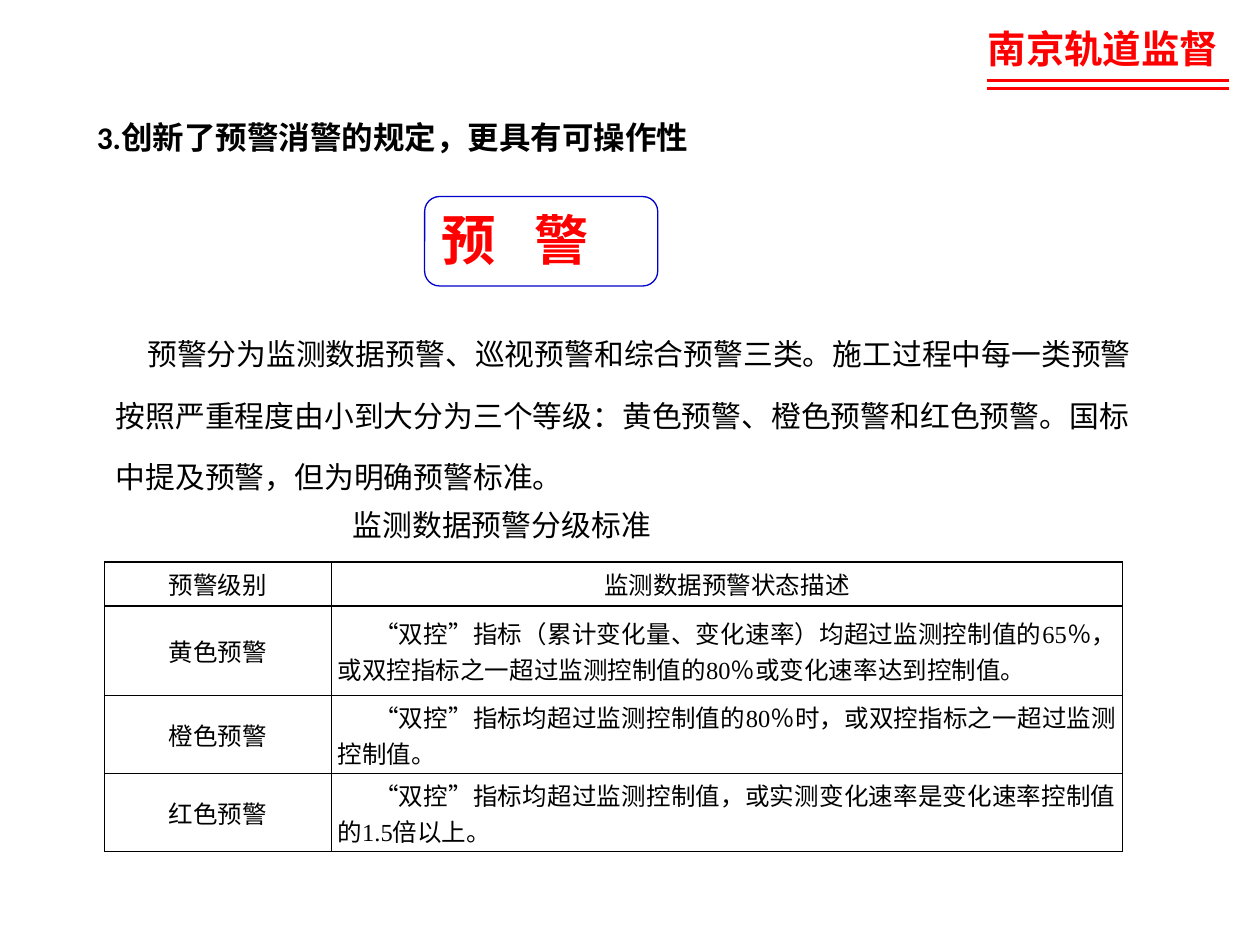
from lxml import etree
from pptx import Presentation
from pptx import util as u
from pptx.dml.color import RGBColor
from pptx.enum import shapes, text
from pptx.oxml.ns import qn

COLORS = {"red": "FF0000", "black": "000000", "blue": "0000CC", "white": "FFFFFF"}
HEADER = ["预警级别", "监测数据预警状态描述"]
LEVELS = [
    ("黄色预警", "“双控”指标（累计变化量、变化速率）均超过监测控制值的65％，或双控指标之一超过监测控制值的80％或变化速率达到控制值。"),
    ("橙色预警", "“双控”指标均超过监测控制值的80％时，或双控指标之一超过监测控制值。"),
    ("红色预警", "“双控”指标均超过监测控制值，或实测变化速率是变化速率控制值的1.5倍以上。"),
]
BODY = "预警分为监测数据预警、巡视预警和综合预警三类。施工过程中每一类预警按照严重程度由小到大分为三个等级：黄色预警、橙色预警和红色预警。国标中提及预警，但为明确预警标准。"


def rgb(name):
    return RGBColor.from_string(COLORS[name])


def assign(obj, values):
    for name, value in values.items():
        setattr(obj, name, value)


class Deck:
    def __init__(self, width, height):
        self.prs = Presentation()
        assign(self.prs, {"slide_width": u.Inches(width), "slide_height": u.Inches(height)})
        self.s = self.prs.slides.add_slide(self.prs.slide_layouts[6])

    def add_words(self, tf, words, size, font="Arial", color="black", bold=False,
                  spacing=None, indent=None, **para):
        p = tf.paragraphs[0]
        assign(p, para)
        if indent:
            pPr = p._p.get_or_add_pPr()
            for name, value in zip(("marL", "indent"), indent):
                pPr.set(name, str(u.Inches(value)))
        r = p.add_run()
        r.text = words
        assign(r.font, {"name": font, "size": u.Pt(size), "bold": bold})
        r.font.color.rgb = rgb(color)
        if spacing:
            r._r.get_or_add_rPr().set("spc", str(int(spacing * 100)))

    def label(self, box, words, size, inset=(0.1, 0.05),
              anchor=text.MSO_ANCHOR.TOP, **style):
        tf = self.s.shapes.add_textbox(*map(u.Inches, box)).text_frame
        x, y = map(u.Inches, inset)
        assign(tf, {"word_wrap": True, "vertical_anchor": anchor, "margin_left": x,
                    "margin_right": x, "margin_top": y, "margin_bottom": y})
        self.add_words(tf, words, size, **style)

    def rule(self, x1, x2, y, color, width):
        sp = self.s.shapes.add_connector(
            shapes.MSO_CONNECTOR.STRAIGHT, *map(u.Inches, (x1, y, x2, y)))
        sp.line.color.rgb = rgb(color)
        sp.line.width = u.Pt(width)
        etree.SubElement(sp._element.spPr, qn("a:effectLst"))

    def frame(self, box, color, width):
        sp = self.s.shapes.add_shape(
            shapes.MSO_SHAPE.ROUNDED_RECTANGLE, *map(u.Inches, box))
        sp.shadow.inherit = False
        sp.fill.background()
        sp.line.color.rgb = rgb(color)
        sp.line.width = u.Pt(width)

    def border(self, cell, color, width):
        tcPr = cell._tc.get_or_add_tcPr()
        for i, side in enumerate(("lnL", "lnR", "lnT", "lnB")):
            ln = etree.Element(qn("a:" + side), w=str(u.Pt(width)))
            fill = etree.SubElement(ln, qn("a:solidFill"))
            etree.SubElement(fill, qn("a:srgbClr"), val=COLORS[color])
            tcPr.insert(i, ln)

    def table(self, left, top, widths, heights, rows):
        box = (left, top, sum(widths), sum(heights))
        tbl = self.s.shapes.add_table(
            len(rows), len(widths), *map(u.Inches, box)).table
        assign(tbl, {"first_row": False, "horz_banding": False})
        for col, width in zip(tbl.columns, widths):
            col.width = u.Inches(width)
        for i, (row, height) in enumerate(zip(tbl.rows, heights)):
            row.height = u.Inches(height)
            for j, cell in enumerate(row.cells):
                assign(cell, {"vertical_anchor": text.MSO_ANCHOR.MIDDLE,
                              "margin_left": u.Inches(0.05), "margin_right": u.Inches(0.05),
                              "margin_top": 0, "margin_bottom": 0})
                cell.fill.solid()
                cell.fill.fore_color.rgb = rgb("white")
                self.border(cell, "black", 1)
                described = i > 0 and j > 0
                align = text.PP_ALIGN.JUSTIFY if described else text.PP_ALIGN.CENTER
                self.add_words(cell.text_frame, rows[i][j], 14, "Times New Roman",
                               alignment=align, indent=(0, 0.29) if described else None)


def main():
    deck = Deck(10, 7.5)
    deck.label((7.74, 0.15, 2.38, 0.47), "南京轨道监督", 22,
               font="Calibri", color="red", bold=True)
    for y in (0.64, 0.7):
        deck.rule(7.83, 9.75, y, "red", 1.5)
    deck.label((0.44, 2.41, 8.68, 1.57), BODY, 17,
               indent=(0.38, 0.25), line_spacing=u.Pt(35.2))
    deck.frame((3.37, 1.56, 1.85, 0.71), "blue", 0.75)
    deck.label((3.41, 1.64, 3.37, 0.56), "预 警", 31, anchor=text.MSO_ANCHOR.BOTTOM,
               color="red", bold=True, spacing=7.5)
    deck.table(0.83, 4.46, (1.8, 6.28), (0.35, 0.71, 0.62, 0.62), [HEADER, *LEVELS])
    deck.label((2.73, 3.98, 4.72, 0.36), "监测数据预警分级标准", 17, inset=(0.07, 0.04))
    deck.label((0.67, 0.94, 4.9, 0.4), "3.创新了预警消警的规定，更具有可操作性", 18,
               font="Calibri", bold=True, line_spacing=0.83)
    deck.prs.save("out.pptx")


if __name__ == "__main__":
    main()
